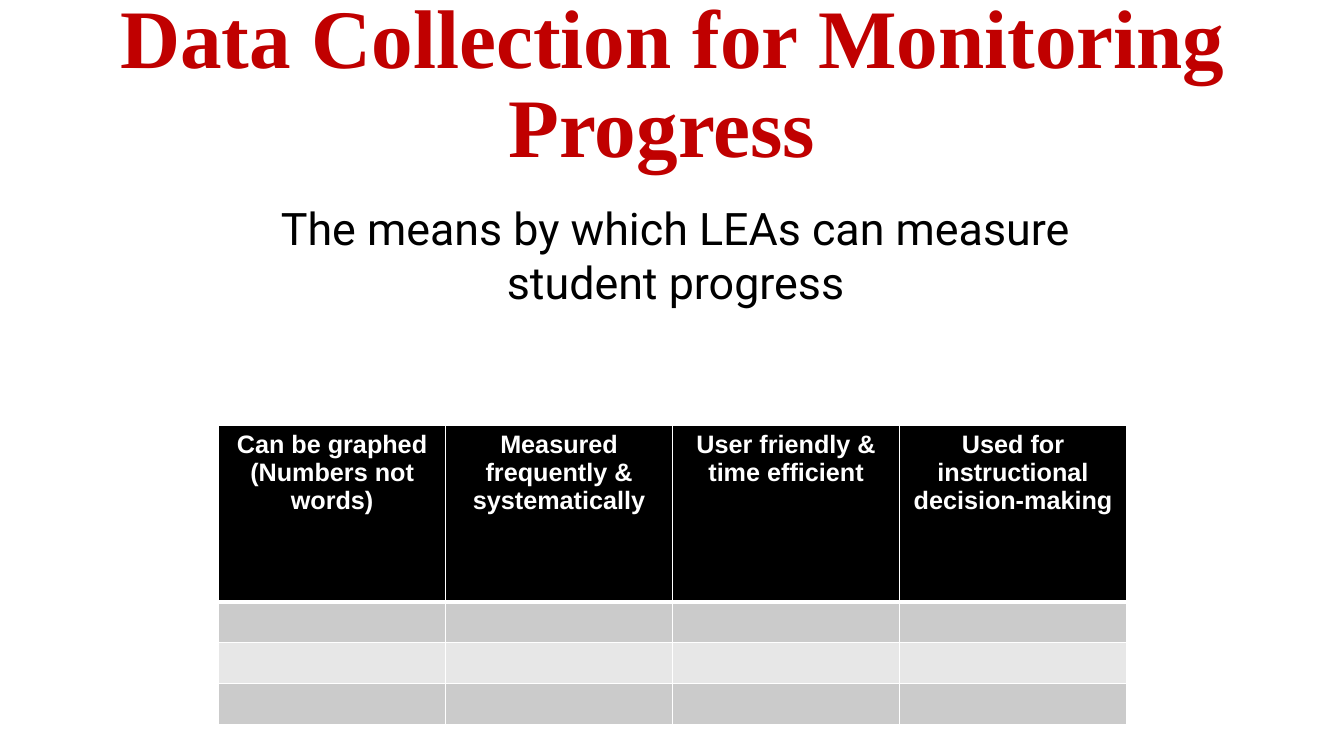
from lxml.etree import SubElement
from pptx import Presentation
from pptx.dml.color import RGBColor
from pptx.enum.text import MSO_ANCHOR, MSO_AUTO_SIZE, PP_ALIGN
from pptx.oxml.ns import qn
from pptx.util import Cm, Pt

TITLE = "Data Collection for Monitoring Progress "
SUBTITLE = "The means by which LEAs can measure student progress"
CRITERIA = [
    "Can be graphed\n(Numbers not words)",
    "Measured frequently & systematically",
    "User friendly & time efficient",
    "Used for instructional decision-making",
]
ROW_FILLS = ["000000", "CBCBCB", "E7E7E7", "CBCBCB"]
ROW_HEIGHTS = [Cm(4.45), Cm(1.03), Cm(1.03), Cm(1.03)]
COLUMN_WIDTH = Cm(5.72)


def color(hex_value):
    return RGBColor.from_string(hex_value)


def fill_text(frame, text, font_name, size, hex_value, bold=False):
    frame.text = text
    for paragraph in frame.paragraphs:
        paragraph.alignment = PP_ALIGN.CENTER
        paragraph.font.name = font_name
        paragraph.font.size = Pt(size)
        paragraph.font.bold = bold
        paragraph.font.color.rgb = color(hex_value)


def set_borders(cell, hex_value, widths):
    properties = cell._tc.get_or_add_tcPr()
    for side, width in widths.items():
        line = SubElement(properties, qn(f"a:ln{side}"), w=str(Pt(width)))
        solid = SubElement(line, qn("a:solidFill"))
        SubElement(solid, qn("a:srgbClr"), val=hex_value)


def add_title(slide):
    title = slide.shapes.title
    title.left, title.top = Cm(1.73), Cm(0.86)
    title.width, title.height = Cm(30.43), Cm(2.62)
    frame = title.text_frame
    fill_text(frame, TITLE, "Times New Roman", 59.4, "C00000", bold=True)
    frame.paragraphs[0].line_spacing = 0.9
    frame.vertical_anchor = MSO_ANCHOR.MIDDLE
    frame.word_wrap = True
    frame.auto_size = MSO_AUTO_SIZE.NONE


def add_subtitle(slide):
    subtitle = slide.shapes.add_textbox(Cm(5.69), Cm(4.93), Cm(22.68), Cm(3))
    frame = subtitle.text_frame
    frame.word_wrap = True
    frame.auto_size = MSO_AUTO_SIZE.SHAPE_TO_FIT_TEXT
    fill_text(frame, SUBTITLE, "Roboto", 32, "000000")


def add_criteria_table(slide):
    table = slide.shapes.add_table(
        len(ROW_FILLS), len(CRITERIA), Cm(5.51), Cm(10.72),
        COLUMN_WIDTH * len(CRITERIA), sum(ROW_HEIGHTS),
    ).table
    for column in table.columns:
        column.width = COLUMN_WIDTH

    for index, (row, height) in enumerate(zip(table.rows, ROW_HEIGHTS)):
        row.height = height
        is_header = index == 0
        borders = {"L": 1, "R": 1, "T": 3 if index == 1 else 1,
                   "B": 3 if is_header else 1}
        for cell, criterion in zip(row.cells, CRITERIA):
            fill_text(cell.text_frame, criterion if is_header else "",
                      "Arial", 18, "FFFFFF" if is_header else "000000",
                      bold=is_header)
            set_borders(cell, "FFFFFF", borders)
            cell.fill.solid()
            cell.fill.fore_color.rgb = color(ROW_FILLS[index])


def main():
    presentation = Presentation()
    presentation.slide_width, presentation.slide_height = Cm(33.87), Cm(19.05)
    # Title-only layout
    slide = presentation.slides.add_slide(presentation.slide_layouts[5])

    # Heading
    add_title(slide)
    add_subtitle(slide)

    # Criteria for the data
    add_criteria_table(slide)

    presentation.save("out.pptx")


if __name__ == "__main__":
    main()
